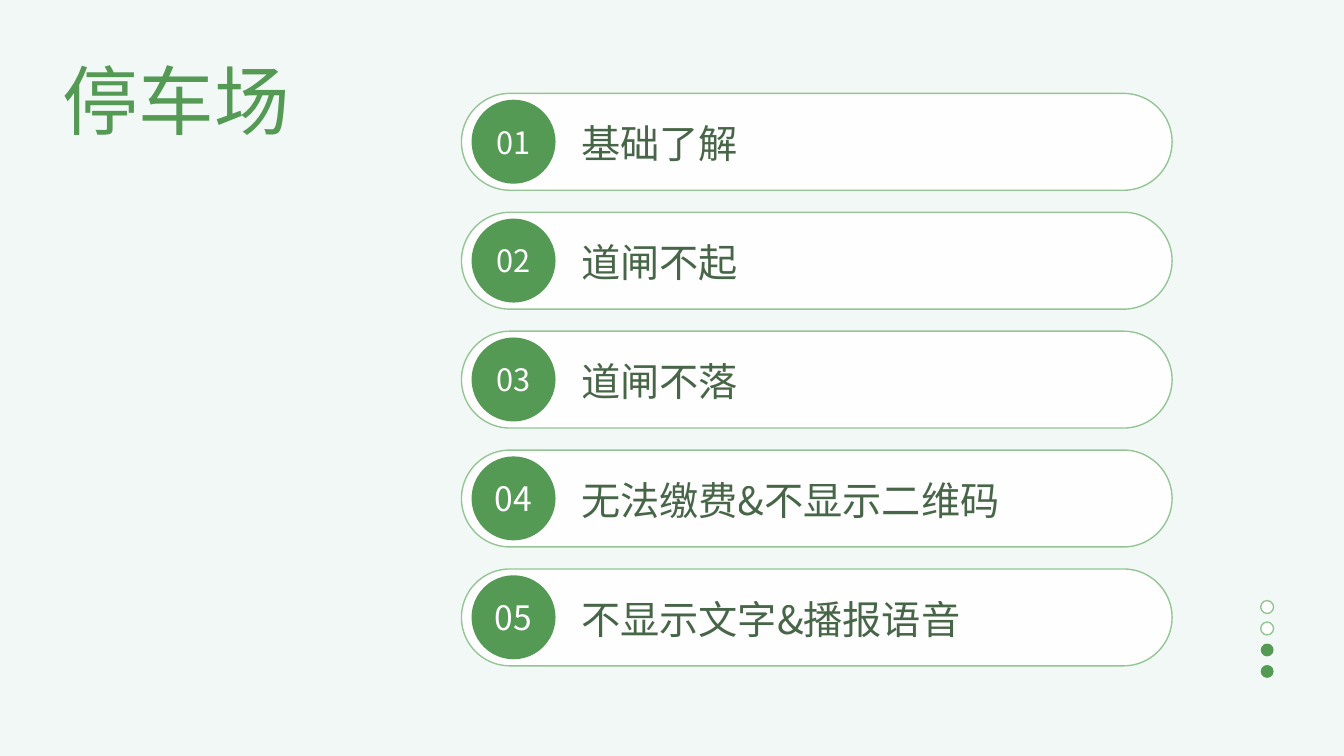
from lxml import etree
from pptx import Presentation
from pptx.dml.color import RGBColor
from pptx.enum.shapes import MSO_SHAPE
from pptx.enum.text import MSO_ANCHOR, PP_ALIGN
from pptx.oxml.ns import qn
from pptx.util import Pt

OVAL, PILL = MSO_SHAPE.OVAL, MSO_SHAPE.ROUNDED_RECTANGLE
MIDDLE, BOTTOM = MSO_ANCHOR.MIDDLE, MSO_ANCHOR.BOTTOM
LEFT, CENTER = PP_ALIGN.LEFT, PP_ALIGN.CENTER
FONT = "Noto Sans CJK JP"
COLORS = {"back": "F2F8F6", "green": "549A54", "edge": "95C595",
          "white": "FFFFFF", "pill": "FEFEFE", "dark": "2A4D2A"}
ITEMS = [("基础了解", 22), ("道闸不起", 22), ("道闸不落", 22),
         ("无法缴费&不显示二维码", 24), ("不显示文字&播报语音", 24)]
DOTS = ["white", "white", "green", "green"]


def color(name):
    return RGBColor.from_string(COLORS[name])


def add_form(slide, kind, box, fill, edge=None):
    form = slide.shapes.add_shape(kind, *map(Pt, box))
    form.shadow.inherit = False
    form.fill.solid()
    form.fill.fore_color.rgb = color(fill)
    if edge:
        form.line.color.rgb = color(edge)
        form.line.width = Pt(1)
    else:
        form.line.fill.background()
    return form


def write(form, text, size, tint, align=LEFT, alpha=None, **frame):
    """Put one line of text in a shape; frame holds text frame settings."""
    base = {"margin_left": 0, "margin_right": 0, "margin_top": 0,
            "margin_bottom": 0, "word_wrap": True, "vertical_anchor": MIDDLE}
    for key, value in {**base, **frame}.items():
        setattr(form.text_frame, key, value)
    line = form.text_frame.paragraphs[0]
    line.alignment = align
    run = line.add_run()
    run.text = text
    run.font.size = Pt(size)
    run.font.name = FONT
    run.font.color.rgb = color(tint)
    props = run.font._element
    etree.SubElement(props, qn("a:ea"), typeface=FONT)
    if alpha:
        tone = props.find(".//" + qn("a:srgbClr"))
        etree.SubElement(tone, qn("a:alpha"), val=str(alpha * 1000))
    return line


def add_title(slide, box, text):
    form = slide.shapes.add_textbox(*map(Pt, box))
    line = write(form, text, 54, "green", vertical_anchor=BOTTOM,
                 margin_left=Pt(6), margin_right=Pt(7.2))
    line.line_spacing = 1.2


def add_item(slide, box, number, text, size):
    x, y, width, height = box
    pill = add_form(slide, PILL, box, "pill", "edge")
    pill.adjustments[0] = 0.5
    badge = add_form(slide, OVAL, (x + 7.2, y + 4.5, 60, 60), "green")
    write(badge, f"{number:02}", size, "white", CENTER, word_wrap=False,
          margin_left=Pt(7.2), margin_right=Pt(7.2))
    label = slide.shapes.add_textbox(
        *map(Pt, (x + 85.7, y + 11, width - 116.6, height - 20.2)))
    write(label, text, 28, "dark", alpha=85)


def add_list(slide, box):
    x, y, width, height = box
    tall = 69.2
    step = (height - tall) / (len(ITEMS) - 1)
    for i, (text, size) in enumerate(ITEMS):
        add_item(slide, (x, y + i * step, width, tall), i + 1, text, size)


def add_dots(slide, box):
    x, y, width, height = box
    step = (height - width) / (len(DOTS) - 1)
    for i, fill in enumerate(DOTS):
        edge = "edge" if fill == "white" else None
        add_form(slide, OVAL, (x, y + i * step, width, width), fill, edge)


def main():
    deck = Presentation()
    deck.slide_width, deck.slide_height = Pt(960), Pt(540)
    slide = deck.slides.add_slide(deck.slide_layouts[6])
    slide.background.fill.solid()
    slide.background.fill.fore_color.rgb = color("back")
    add_dots(slide, (900.5, 429, 9.2, 55.2))
    add_title(slide, (39, 26, 291, 77), "停车场")
    add_list(slide, (329.6, 66.7, 507.6, 408.9))
    deck.save("out.pptx")


if __name__ == "__main__":
    main()
